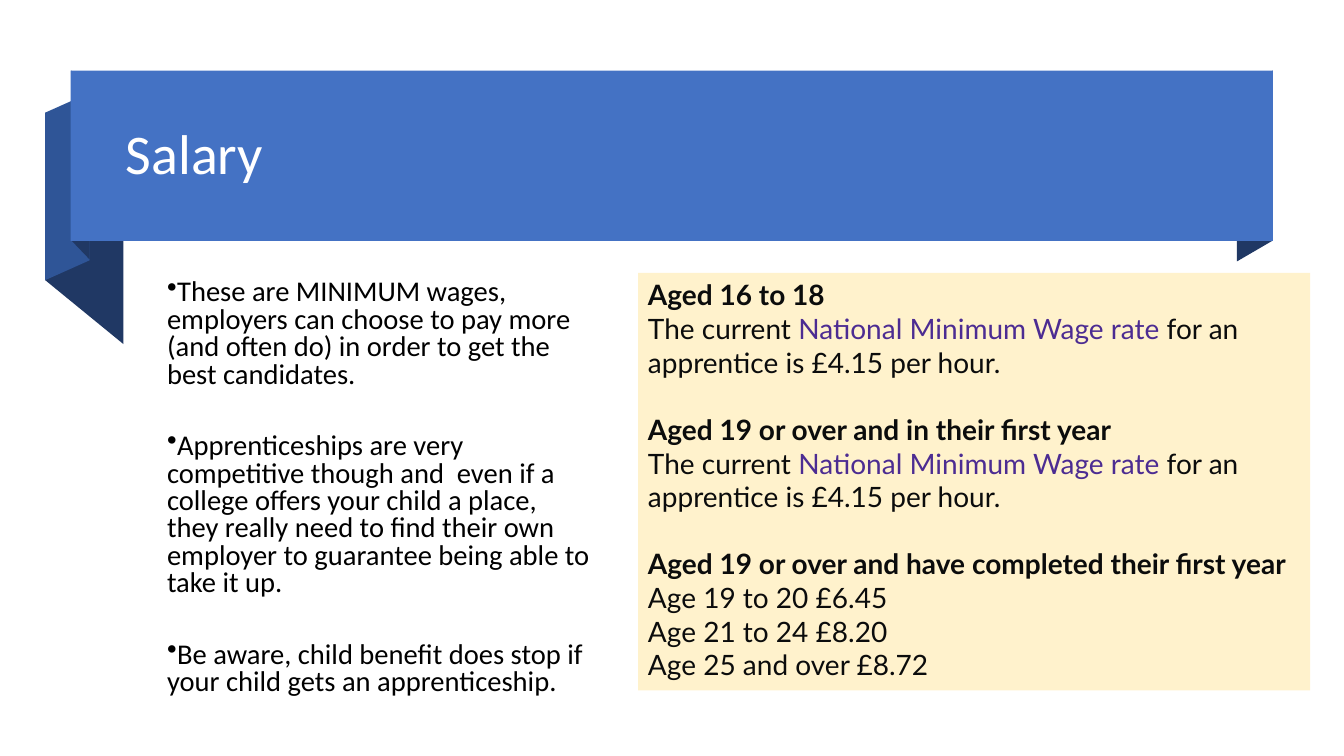
from dataclasses import dataclass

import pptx
import pptx.dml.color
import pptx.enum.shapes
import pptx.enum.text
import pptx.oxml
import pptx.oxml.ns
import pptx.util
from pptx.util import Cm, Pt


@dataclass(frozen=True)
class Theme:
    banner: str = "4472C4"
    side: str = "2F5597"
    fold: str = "203864"
    panel: str = "FFF2CC"
    white: str = "FFFFFF"
    black: str = "000000"
    ink: str = "0B0C0C"
    link: str = "4C2C92"
    heading_font: str = "Calibri"
    panel_font: str = "Lato"
    title_size: float = 40
    advice_size: float = 20.4
    rate_size: float = 20


THEME = Theme()

FOLDS = [
    (32.08, 1.78, 31.17, 2.31, 4.28, THEME.fold),
    (3.11, 4.45, 1.14, 2.84, 4.22, THEME.fold),
    (2.26, 2.34, 1.14, 2.84, 4.22, THEME.side),
    (2.26, 2.26, 1.8, 1.78, 4.28, THEME.fold),
]

ADVICE = [
    "These are MINIMUM wages, employers can choose to pay more (and often do) in order to get the best candidates.",
    "Apprenticeships are very competitive though and  even if a college offers your child a place, "
    "they really need to find their own employer to guarantee being able to take it up.",
    "Be aware, child benefit does stop if your child gets an apprenticeship.",
]

APPRENTICE_RATE = ["The current ", "National Minimum Wage rate", " for an apprentice is £4.15 per hour."]

RATES = [
    ("Aged 16 to 18", [APPRENTICE_RATE]),
    ("Aged 19 or over and in their first year", [APPRENTICE_RATE]),
    (
        "Aged 19 or over and have completed their first year",
        [["Age 19 to 20 £6.45"], ["Age 21 to 24 £8.20"], ["Age 25 and over £8.72"]],
    ),
]


def paint(shape, color):
    shape.shadow.inherit = False
    shape.fill.solid()
    shape.fill.fore_color.rgb = pptx.dml.color.RGBColor.from_string(color)
    shape.line.fill.background()


def style(span, font, size, color, bold=False):
    span.font.name = font
    span.font.size = Pt(size)
    span.font.bold = bold
    span.font.color.rgb = pptx.dml.color.RGBColor.from_string(color)


def add_fold(page, outer_x, outer_y, inner_x, inner_y, height, color):
    builder = page.shapes.build_freeform(Cm(outer_x), Cm(outer_y))
    corners = [(inner_x, inner_y), (inner_x, inner_y + height), (outer_x, outer_y + height)]
    builder.add_line_segments([(Cm(x), Cm(y)) for x, y in corners], close=True)
    paint(builder.convert_to_shape(), color)


def add_panel(page, left, top, width, height, color):
    kind = pptx.enum.shapes.MSO_SHAPE.RECTANGLE
    panel = page.shapes.add_shape(kind, Cm(left), Cm(top), Cm(width), Cm(height))
    paint(panel, color)
    return panel


def add_text_box(page, left, top, width, height):
    box = page.shapes.add_textbox(Cm(left), Cm(top), Cm(width), Cm(height))
    box.text_frame.word_wrap = True
    return box.text_frame


def add_title(page, text):
    frame = add_text_box(page, 2.92, 2.11, 28.63, 3.68)
    frame.vertical_anchor = pptx.enum.text.MSO_ANCHOR.MIDDLE
    frame.text = text
    para = frame.paragraphs[0]
    para.line_spacing = 0.9
    style(para.runs[0], THEME.heading_font, THEME.title_size, THEME.white)


def add_bullet(para):
    properties = para._p.get_or_add_pPr()
    properties.set("marL", "0")
    properties.set("indent", str(-Cm(0.64)))
    bullet = pptx.oxml.parse_xml(f'<a:buChar {pptx.oxml.ns.nsdecls("a")} char="•"/>')
    properties.append(bullet)


def add_advice(page, items):
    frame = add_text_box(page, 3.96, 6.93, 11.25, 11.07)
    frame.text = "\n".join(items)
    for para in frame.paragraphs:
        para.line_spacing = 0.8
        para.space_after = Pt(31.5)
        add_bullet(para)
        style(para.runs[0], THEME.heading_font, THEME.advice_size, THEME.black)


def add_rate_line(para, texts, bold=False):
    para.alignment = pptx.enum.text.PP_ALIGN.LEFT
    for position, text in enumerate(texts):
        span = para.add_run()
        span.text = text
        color = THEME.link if position == 1 else THEME.ink
        style(span, THEME.panel_font, THEME.rate_size, color, bold)


def add_rates(page, groups):
    frame = add_panel(page, 16.08, 6.88, 16.94, 10.52, THEME.panel).text_frame
    frame.word_wrap = True
    frame.vertical_anchor = pptx.enum.text.MSO_ANCHOR.TOP
    for position, (heading, lines) in enumerate(groups):
        para = frame.add_paragraph() if position else frame.paragraphs[0]
        para.space_before = Pt(24 if position else 0)
        add_rate_line(para, [heading], bold=True)
        for texts in lines:
            add_rate_line(frame.add_paragraph(), texts)


def main():
    deck = pptx.Presentation()
    deck.slide_width, deck.slide_height = Cm(33.87), Cm(19.05)
    page = deck.slides.add_slide(deck.slide_layouts[6])
    for fold in FOLDS:
        add_fold(page, *fold)
    add_panel(page, 1.78, 1.78, 30.3, 4.29, THEME.banner)
    add_title(page, "Salary")
    add_advice(page, ADVICE)
    add_rates(page, RATES)
    deck.save("out.pptx")


if __name__ == "__main__":
    main()
